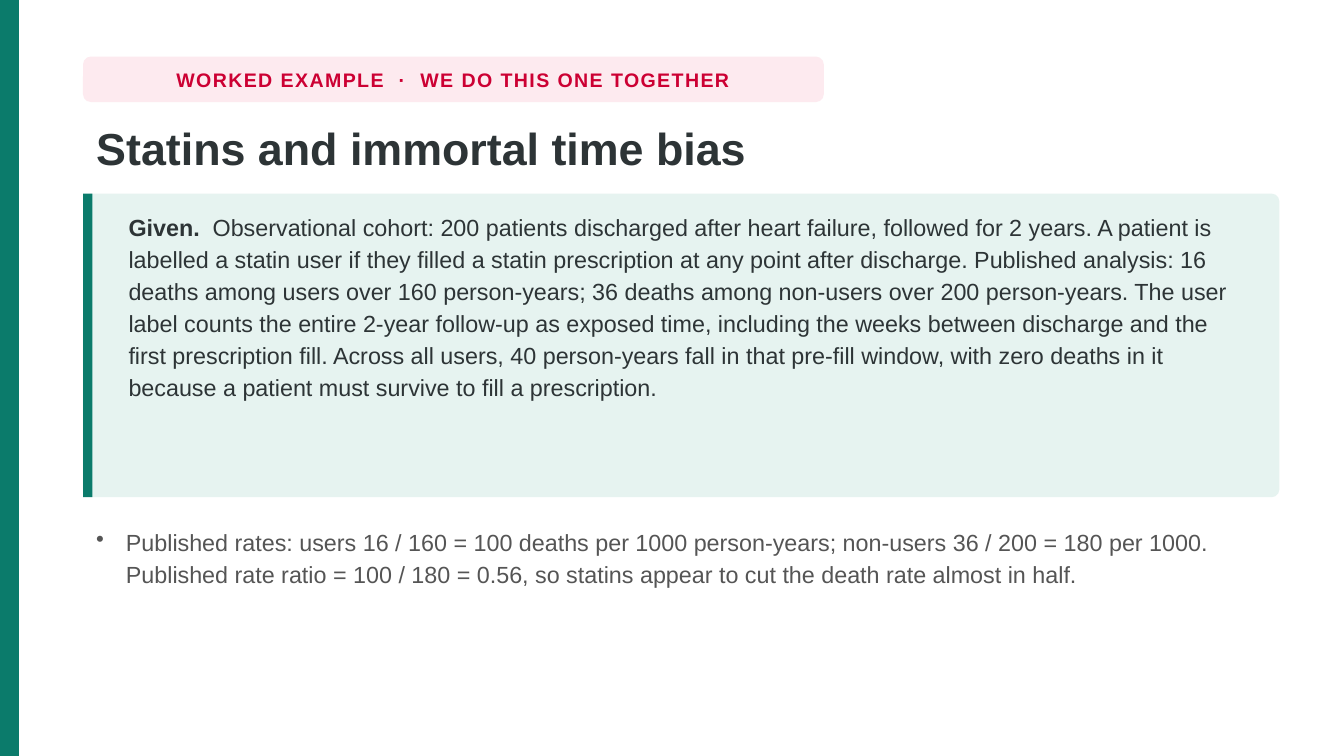
from lxml.etree import SubElement
from pptx import Presentation
from pptx.dml.color import RGBColor
from pptx.enum.shapes import MSO_SHAPE
from pptx.enum.text import MSO_ANCHOR, PP_ALIGN
from pptx.oxml.ns import qn
from pptx.util import Cm, Pt

COLORS = {
    "teal": "0B7B6B",
    "mint": "E6F3F0",
    "blush": "FDEAEF",
    "crimson": "CC0033",
    "ink": "2D3436",
    "grey": "555555",
}
FONT = "Arial"
LEFT, WIDTH = 1.57, 22.61
TAG_TOP, TAG_WIDTH, TAG_HEIGHT = 1.07, 14, 0.86
PANEL_TOP, PANEL_HEIGHT = 3.66, 5.74
SLIDE_WIDTH, SLIDE_HEIGHT = 25.4, 14.29


def color(name):
    return RGBColor.from_string(COLORS[name])


def add_block(page, left, top, width, height, fill, radius=None):
    """Draw a plain filled rectangle, rounded when a radius is given."""
    kind = MSO_SHAPE.RECTANGLE if radius is None else MSO_SHAPE.ROUNDED_RECTANGLE
    block = page.shapes.add_shape(kind, Cm(left), Cm(top), Cm(width), Cm(height))
    if radius is not None:
        block.adjustments[0] = radius / min(width, height)
    block.shadow.inherit = False
    block.fill.solid()
    block.fill.fore_color.rgb = color(fill)
    block.line.fill.background()


def add_text(page, left, top, width, height, wrap=True):
    """Add an empty text box and return its first paragraph."""
    box = page.shapes.add_textbox(Cm(left), Cm(top), Cm(width), Cm(height))
    box.text_frame.word_wrap = wrap
    return box.text_frame, box.text_frame.paragraphs[0]


def add_span(para, text, size, fill, bold=False):
    span = para.add_run()
    span.text = text
    span.font.name = FONT
    span.font.size = Pt(size)
    span.font.bold = bold
    span.font.color.rgb = color(fill)
    return span


def set_bullet(para, indent):
    properties = para._p.get_or_add_pPr()
    properties.set("marL", str(Cm(indent)))
    properties.set("indent", str(-Cm(indent)))
    SubElement(properties, qn("a:buChar")).set("char", "•")


def add_tag(page, text):
    place = (LEFT, TAG_TOP, TAG_WIDTH, TAG_HEIGHT)
    add_block(page, *place, "blush", radius=0.15)
    frame, para = add_text(page, *place, wrap=False)
    frame.vertical_anchor = MSO_ANCHOR.MIDDLE
    para.alignment = PP_ALIGN.CENTER
    span = add_span(para, text, 10.5, "crimson", bold=True)
    span.font._element.set("spc", "80")


def add_title(page, text):
    _, para = add_text(page, LEFT, 2.13, WIDTH, 1.42)
    para.line_spacing = 1.02
    add_span(para, text, 24, "ink", bold=True)


def add_panel(page, label, text):
    add_block(page, LEFT, PANEL_TOP, WIDTH, PANEL_HEIGHT, "mint", radius=0.15)
    add_block(page, LEFT, PANEL_TOP, 0.18, PANEL_HEIGHT, "teal")
    _, para = add_text(page, LEFT + 0.61, PANEL_TOP + 0.18,
                       WIDTH - 1.27, PANEL_HEIGHT - 0.36)
    para.line_spacing = 1.14
    add_span(para, label, 12.5, "ink", bold=True)
    add_span(para, text, 12.5, "ink")


def add_bullet(page, text):
    _, para = add_text(page, LEFT, 9.8, WIDTH, 1.8)
    para.line_spacing = 1.12
    set_bullet(para, 0.56)
    add_span(para, text, 12.5, "grey")


def main():
    deck = Presentation()
    deck.slide_width, deck.slide_height = Cm(SLIDE_WIDTH), Cm(SLIDE_HEIGHT)
    page = deck.slides.add_slide(deck.slide_layouts[6])

    # Edge stripe, tag and title
    add_block(page, 0, 0, 0.36, SLIDE_HEIGHT, "teal")
    add_tag(page, "WORKED EXAMPLE  ·  WE DO THIS ONE TOGETHER")
    add_title(page, "Statins and immortal time bias")

    # The given facts
    add_panel(
        page,
        "Given.  ",
        "Observational cohort: 200 patients discharged after heart failure, "
        "followed for 2 years. A patient is labelled a statin user if they "
        "filled a statin prescription at any point after discharge. Published "
        "analysis: 16 deaths among users over 160 person-years; 36 deaths among "
        "non-users over 200 person-years. The user label counts the entire "
        "2-year follow-up as exposed time, including the weeks between discharge "
        "and the first prescription fill. Across all users, 40 person-years fall "
        "in that pre-fill window, with zero deaths in it because a patient must "
        "survive to fill a prescription.",
    )

    # First step of the solution
    add_bullet(
        page,
        "Published rates: users 16 / 160 = 100 deaths per 1000 person-years; "
        "non-users 36 / 200 = 180 per 1000. Published rate ratio = 100 / 180 = "
        "0.56, so statins appear to cut the death rate almost in half.",
    )
    deck.save("out.pptx")


if __name__ == "__main__":
    main()
